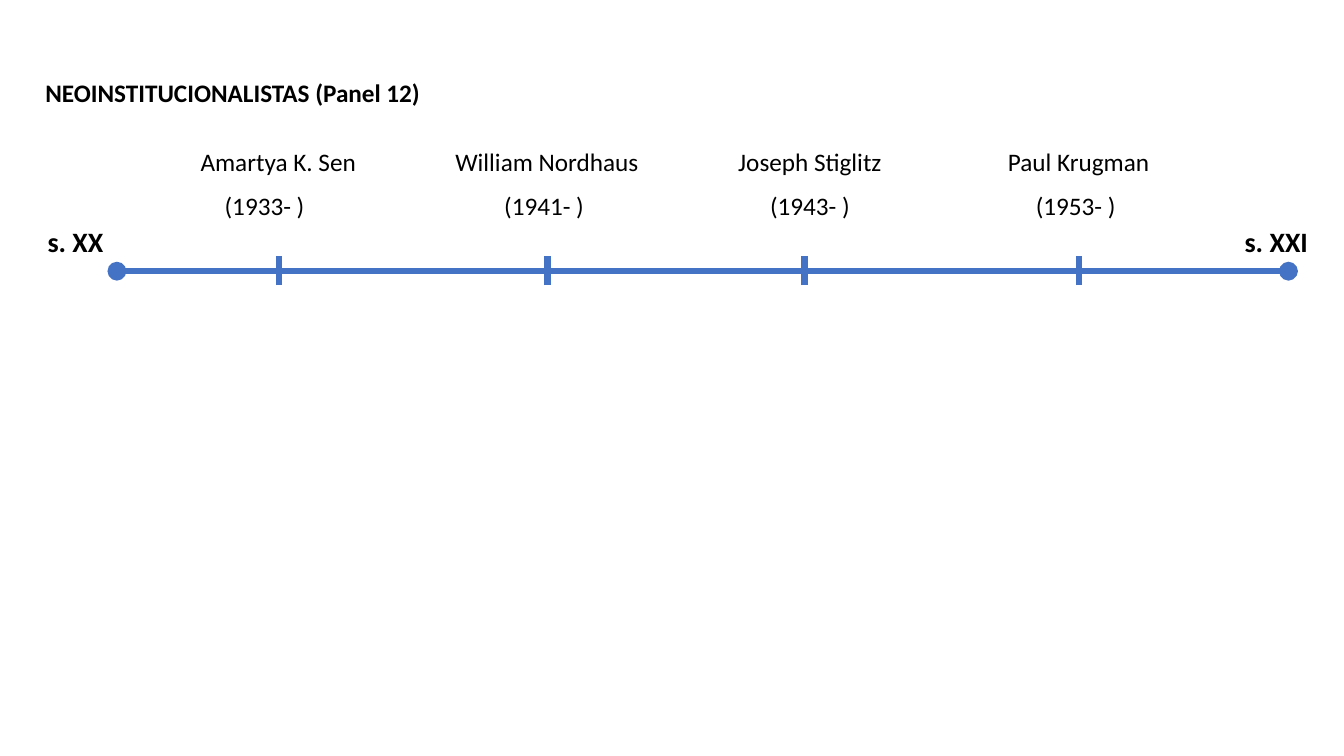
from lxml.etree import SubElement
from pptx import Presentation
from pptx.dml.color import RGBColor
from pptx.enum.shapes import MSO_CONNECTOR as Connector
from pptx.enum.text import MSO_ANCHOR as Anchor, MSO_AUTO_SIZE as AutoSize, PP_ALIGN as Align
from pptx.oxml.ns import qn
from pptx.util import Inches, Pt

WIDTH, HEIGHT = Inches(13.33), Inches(7.5)
FONT = "Calibri"
COLORS = {"text": "000000", "axis": "4472C4"}

# All positions are percentages of the slide's width or height.
AXIS_LEFT, AXIS_RIGHT, AXIS_Y = 8.7, 95.87, 35.87
TICK_TOP, TICK_BOTTOM = 33.87, 37.73
LABEL_LEFT, LABEL_STEP, LABEL_TOP = 12.75, 19.78, 18.67
LABEL_WIDTH, LABEL_HEIGHT = 15.9, 11.33
CENTURY_TOP, CENTURY_HEIGHT = 28.4, 6.27

# Name, years, tick position, indent of the years in inches (None: centred)
ECONOMISTS = [
    ("Amartya K. Sen", "(1933- )", 20.78, 0.43),
    (" William Nordhaus", "(1941- )", 40.74, None),
    ("Joseph Stiglitz", "(1943- )", 59.86, None),
    (" Paul Krugman", "(1953- )", 80.27, None),
]
CENTURIES = [("s. XX ", 2.78, 6.15), ("s. XXI ", 91.82, 6.75)]


def x(percent):
    return round(WIDTH * percent / 100)


def y(percent):
    return round(HEIGHT * percent / 100)


def rgb(name):
    return RGBColor.from_string(COLORS[name])


def write_paragraph(paragraph, text, size, bold=False, align=Align.CENTER, spacing=1.0):
    paragraph.alignment = align
    paragraph.line_spacing = spacing
    paragraph.space_before, paragraph.space_after = Pt(0), Pt(10)
    run = paragraph.add_run()
    run.text = text
    run.font.name, run.font.size, run.font.bold = FONT, Pt(size), bold
    run.font.color.rgb = rgb("text")


def add_line(shapes, start, end, ends=None):
    """Draw an axis-coloured line; ends names the arrowhead put on both ends."""
    line = shapes.add_connector(Connector.STRAIGHT, x(start[0]), y(start[1]), x(end[0]), y(end[1]))
    line.line.color.rgb = rgb("axis")
    line.line.width = Pt(4.5)
    if ends:
        outline = line.line._get_or_add_ln()
        for tag in ("a:headEnd", "a:tailEnd"):
            SubElement(outline, qn(tag), type=ends)
    SubElement(line._element.spPr, qn("a:effectLst"))


def add_title(slide):
    title = slide.shapes.title
    title.left, title.top, title.width, title.height = x(2.63), y(8.93), x(29.56), y(5.73)
    frame = title.text_frame
    frame.word_wrap = False
    frame.auto_size = AutoSize.SHAPE_TO_FIT_TEXT
    frame.vertical_anchor = Anchor.TOP
    write_paragraph(frame.paragraphs[0], "NEOINSTITUCIONALISTAS (Panel 12)", 18, True, Align.LEFT, 1.15)


def add_century(slide, text, left, width):
    box = slide.shapes.add_textbox(x(left), y(CENTURY_TOP), x(width), y(CENTURY_HEIGHT))
    box.text_frame.word_wrap = False
    box.text_frame.auto_size = AutoSize.SHAPE_TO_FIT_TEXT
    write_paragraph(box.text_frame.paragraphs[0], text, 20, bold=True, spacing=1.15)


def add_economist(slide, left, name, years, tick, indent):
    shapes = slide.shapes.add_group_shape().shapes
    box = shapes.add_textbox(x(left), y(LABEL_TOP), x(LABEL_WIDTH), y(LABEL_HEIGHT))
    frame = box.text_frame
    frame.word_wrap = True
    frame.auto_size = AutoSize.SHAPE_TO_FIT_TEXT
    write_paragraph(frame.paragraphs[0], name, 18)
    years_paragraph = frame.add_paragraph()
    write_paragraph(years_paragraph, years, 18, align=Align.LEFT if indent else Align.CENTER)
    if indent:
        properties = years_paragraph._p.get_or_add_pPr()
        properties.set("marL", str(Inches(indent)))
        properties.set("indent", "0")
    add_line(shapes, (tick, TICK_BOTTOM), (tick, TICK_TOP))


def main():
    presentation = Presentation()
    presentation.slide_width, presentation.slide_height = WIDTH, HEIGHT
    slide = presentation.slides.add_slide(presentation.slide_layouts[5])
    add_title(slide)
    add_line(slide.shapes, (AXIS_LEFT, AXIS_Y), (AXIS_RIGHT, AXIS_Y), ends="oval")
    for century in CENTURIES:
        add_century(slide, *century)
    for index, economist in enumerate(ECONOMISTS):
        add_economist(slide, LABEL_LEFT + index * LABEL_STEP, *economist)
    presentation.save("out.pptx")


if __name__ == "__main__":
    main()
